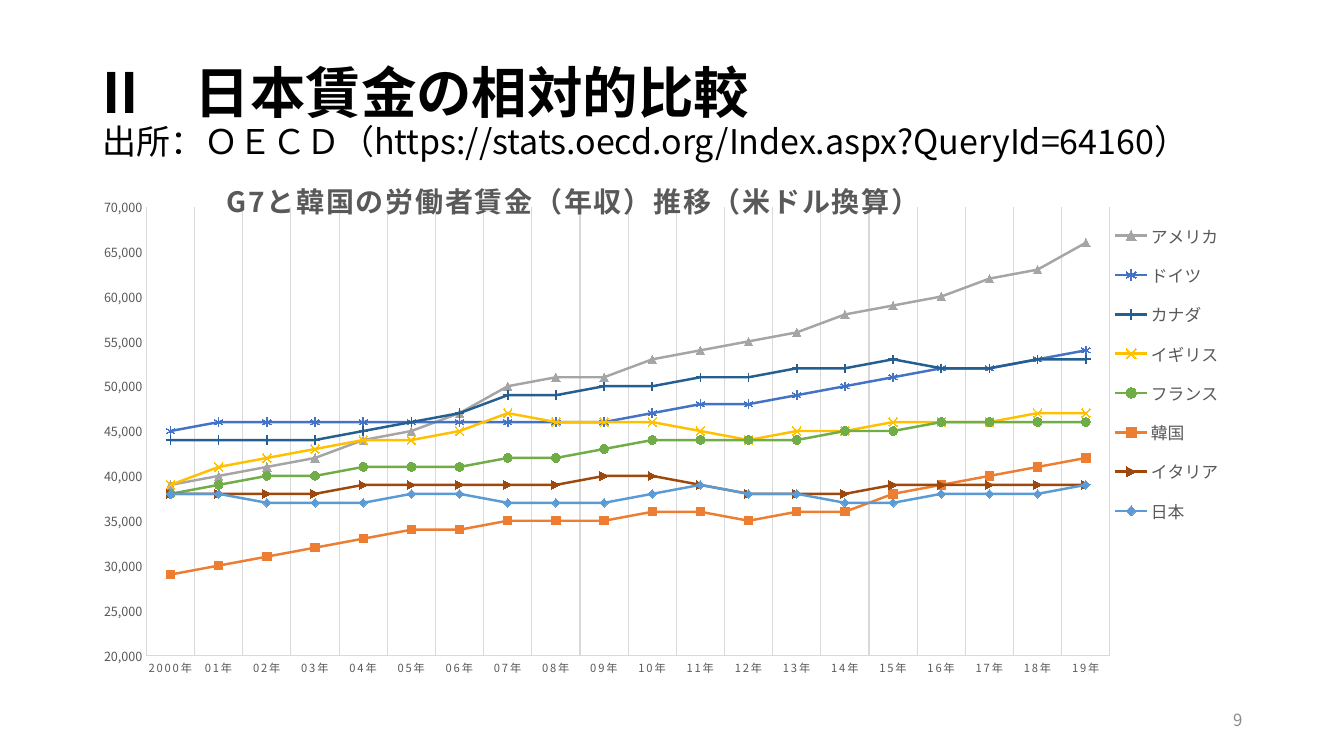
from pptx import Presentation
from pptx.chart.data import CategoryChartData as ChartData
from pptx.dml.color import RGBColor as RGB
from pptx.enum.chart import XL_CHART_TYPE as KIND, XL_LEGEND_POSITION as SIDE
from pptx.enum.chart import XL_MARKER_STYLE as MARK, XL_TICK_MARK as TICK
from pptx.enum.text import MSO_ANCHOR as ANCHOR, PP_ALIGN as ALIGN
from pptx.oxml import parse_xml
from pptx.oxml.ns import nsdecls, qn
from pptx.util import Inches, Pt

FONT = "Noto Sans CJK JP"
COLORS = {"ink": "000000", "text": "595959", "grid": "D9D9D9", "page": "8C8C8C"}
YEARS = ["2000年"] + [f"{year:02}年" for year in range(1, 20)]

# Country, colour, marker, filled marker, wages in thousands of dollars
WAGES = [
    ("アメリカ", "A5A5A5", MARK.TRIANGLE, True,
     [39, 40, 41, 42, 44, 45, 47, 50, 51, 51, 53, 54, 55, 56, 58, 59, 60, 62, 63, 66]),
    ("ドイツ", "4472C4", MARK.STAR, False,
     [45, 46, 46, 46, 46, 46, 46, 46, 46, 46, 47, 48, 48, 49, 50, 51, 52, 52, 53, 54]),
    ("カナダ", "255E91", MARK.PLUS, False,
     [44, 44, 44, 44, 45, 46, 47, 49, 49, 50, 50, 51, 51, 52, 52, 53, 52, 52, 53, 53]),
    ("イギリス", "FFC000", MARK.X, False,
     [39, 41, 42, 43, 44, 44, 45, 47, 46, 46, 46, 45, 44, 45, 45, 46, 46, 46, 47, 47]),
    ("フランス", "70AD47", MARK.CIRCLE, True,
     [38, 39, 40, 40, 41, 41, 41, 42, 42, 43, 44, 44, 44, 44, 45, 45, 46, 46, 46, 46]),
    ("韓国", "ED7D31", MARK.SQUARE, True,
     [29, 30, 31, 32, 33, 34, 34, 35, 35, 35, 36, 36, 35, 36, 36, 38, 39, 40, 41, 42]),
    ("イタリア", "9E480E", MARK.DOT, True,
     [38, 38, 38, 38, 39, 39, 39, 39, 39, 40, 40, 39, 38, 38, 38, 39, 39, 39, 39, 39]),
    ("日本", "5B9BD5", MARK.DIAMOND, True,
     [38, 38, 37, 37, 37, 38, 38, 37, 37, 37, 38, 39, 38, 38, 37, 37, 38, 38, 38, 39]),
]


def set_font(font, size, color, bold=False):
    for name, value in {"name": FONT, "size": Pt(size), "bold": bold}.items():
        setattr(font, name, value)
    font.color.rgb = RGB.from_string(COLORS[color])


def set_line(line, color, width):
    line.color.rgb = RGB.from_string(color)
    line.width = Pt(width)


def set_asian(root):
    for latin in list(root.iter(qn("a:latin"))):
        latin.addnext(parse_xml(f'<a:ea {nsdecls("a")} typeface="{FONT}"/>'))


def add_text(slide, box, runs, align=ALIGN.LEFT):
    shape = slide.shapes.add_textbox(*map(Inches, box))
    frame = shape.text_frame
    frame.word_wrap, frame.vertical_anchor = True, ANCHOR.MIDDLE
    para = frame.paragraphs[0]
    para.alignment, para.line_spacing = align, 0.9
    for i, (text, size, color, bold) in enumerate(runs):
        if i:
            para.add_line_break()
        run = para.add_run()
        run.text = text
        set_font(run.font, size, color, bold)
    set_asian(shape.element)


def place(parent, x, y, w=None, h=None, inner=False):
    """Give a chart part a manual layout in fractions of the chart."""
    for old in parent.findall(qn("c:layout")):
        parent.remove(old)
    parts = [("layoutTarget", "inner")] if inner else []
    parts += [("xMode", "edge"), ("yMode", "edge"), ("x", x), ("y", y)]
    parts += [("w", w), ("h", h)] if w else []
    body = "".join(f'<c:{tag} val="{val}"/>' for tag, val in parts)
    layout = parse_xml(f'<c:layout {nsdecls("c")}><c:manualLayout>{body}'
                       '</c:manualLayout></c:layout>')
    # The layout follows the title text or the legend position
    lead = [kid for kid in parent if kid.tag in (qn("c:tx"), qn("c:legendPos"))]
    if lead:
        lead[0].addnext(layout)
    else:
        parent.insert(0, layout)


def style_axis(axis, size):
    for name in ("major_tick_mark", "minor_tick_mark"):
        setattr(axis, name, TICK.NONE)
    set_font(axis.tick_labels.font, size, "text")
    set_line(axis.format.line, COLORS["grid"], 0.75)


def style_series(series, color, mark, filled):
    series.smooth = False
    set_line(series.format.line, color, 1.75)
    marker = series.marker
    marker.style, marker.size = mark, 6
    set_line(marker.format.line, color, 0.75)
    if filled:
        marker.format.fill.solid()
        marker.format.fill.fore_color.rgb = RGB.from_string(color)
    else:
        marker.format.fill.background()


def add_title(chart, text):
    run = chart.chart_title.text_frame.paragraphs[0].add_run()
    run.text = text
    set_font(run.font, 20, "text", True)
    run.font._element.set("spc", "100")
    chart.chart_title.include_in_layout = True
    place(chart.chart_title._element, 0.12, 0.02)


def add_wages(slide, box):
    data = ChartData(number_format="#,##0")
    data.categories = YEARS
    for name, *_, wages in WAGES:
        data.add_series(name, [wage * 1000 for wage in wages])
    chart = slide.shapes.add_chart(KIND.LINE_MARKERS, *map(Inches, box), data).chart
    set_font(chart.font, 10, "ink")
    chart.plots[0].vary_by_categories = False
    for series, (_, color, mark, filled, _) in zip(chart.plots[0].series, WAGES):
        style_series(series, color, mark, filled)

    # Axes
    cat, val = chart.category_axis, chart.value_axis
    style_axis(cat, 8)
    style_axis(val, 9)
    cat._element.find(".//" + qn("a:defRPr")).set("spc", "120")
    cat.has_major_gridlines, val.has_major_gridlines = True, False
    set_line(cat.major_gridlines.format.line, COLORS["grid"], 0.75)
    scale = {"minimum_scale": 20000, "maximum_scale": 70000, "major_unit": 5000}
    for name, value in scale.items():
        setattr(val, name, value)
    val.tick_labels.number_format = "#,##0"
    val.tick_labels.number_format_is_linked = False

    # Title, legend and plot area
    add_title(chart, "G7と韓国の労働者賃金（年収）推移（米ドル換算）")
    chart.has_legend = True
    legend = chart.legend
    legend.position, legend.include_in_layout = SIDE.RIGHT, False
    set_font(legend.font, 12, "text")
    place(legend._element, 0.88, 0.09, 0.11, 0.62)
    place(chart._chartSpace.find(".//" + qn("c:plotArea")),
          0.055, 0.086, 0.831, 0.846, True)
    set_asian(chart._chartSpace)


def main():
    deck = Presentation()
    deck.slide_width, deck.slide_height = Inches(13.33), Inches(7.5)
    slide = deck.slides.add_slide(deck.slide_layouts[6])
    add_text(slide, (0.92, 0.4, 11.5, 1.45), [
        ("II\u3000日本賃金の相対的比較".replace("\u3000", "　"), 39.6, "ink", True),
        ("出所：ＯＥＣＤ（https://stats.oecd.org/Index.aspx?QueryId=64160）",
         24.3, "ink", False)])
    add_text(slide, (9.42, 6.95, 3, 0.4), [("9", 12, "page", False)], ALIGN.RIGHT)
    add_wages(slide, (0.82, 1.6, 11.5, 5.26))
    deck.save("out.pptx")


if __name__ == "__main__":
    main()
